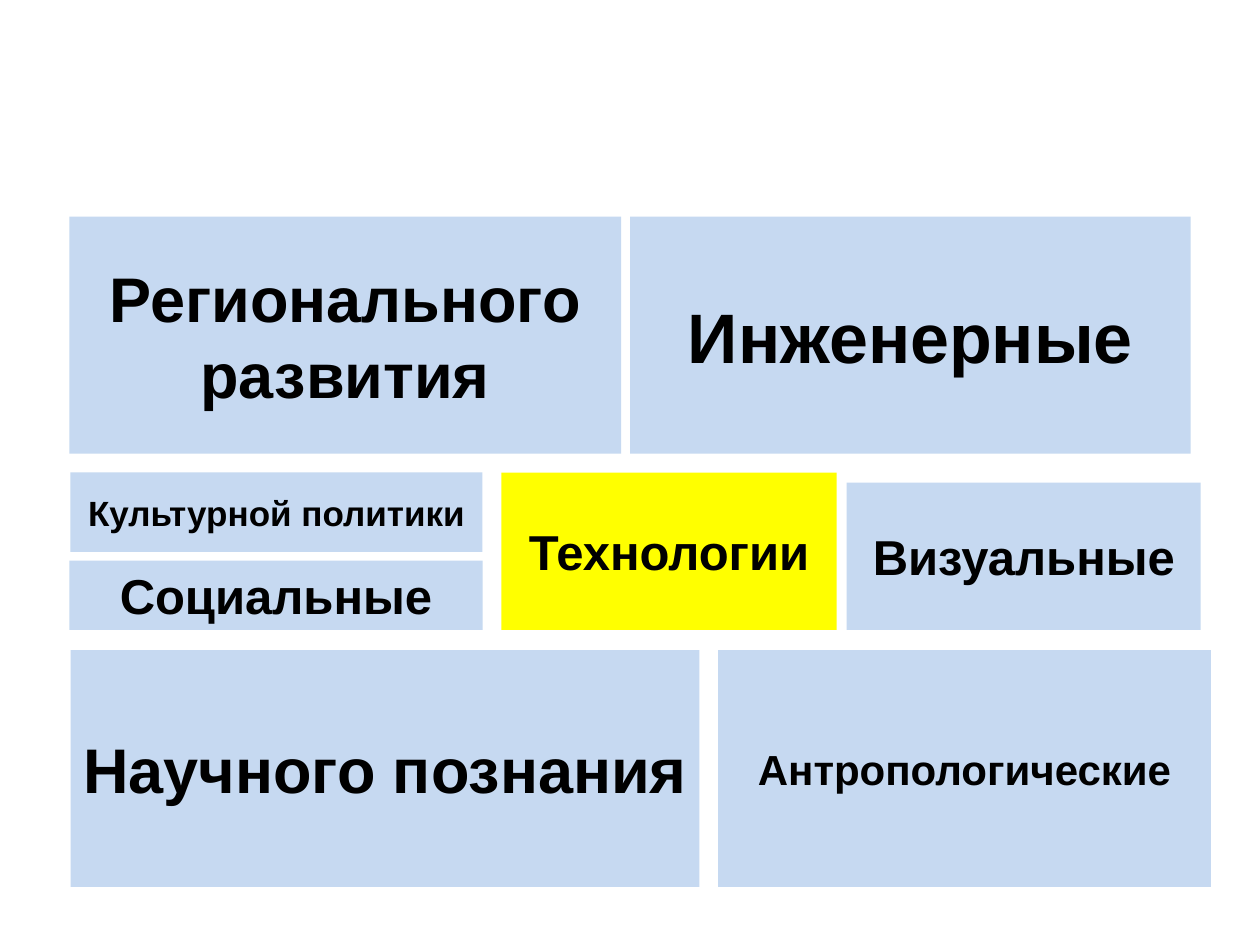
from typing import NamedTuple

from pptx import Presentation
from pptx.dml.color import RGBColor
from pptx.enum.shapes import MSO_SHAPE
from pptx.enum.text import MSO_ANCHOR, PP_ALIGN
from pptx.util import Inches, Pt

RECT = MSO_SHAPE.RECTANGLE
MIDDLE = MSO_ANCHOR.MIDDLE
CENTER = PP_ALIGN.CENTER

COLS, ROWS = 100, 75  # square grid cells of a tenth of an inch
CELL = Inches(0.1)
BLUE, YELLOW, BLACK = "C6D9F1", "FFFF00", "000000"

LEFT = 5.5
TOP, MID, LOW = 17.2, 37.5, 51.6  # tops of the three bands
TALL = 18.8  # height of the top and bottom bands
BASE = 50  # bottom edge of the middle band


class Tile(NamedTuple):
    text: str
    col: float
    row: float
    cols: float
    rows: float
    size: int
    fill: str = BLUE


TILES = [
    Tile("Технологии", 39.8, MID, 26.6, BASE - MID, 28, YELLOW),
    Tile("Регионального развития", LEFT, TOP, 43.8, TALL, 36),
    Tile("Инженерные", 50, TOP, 44.5, TALL, 40),
    Tile("Научного познания", LEFT + 0.1, LOW, 49.9, TALL, 36),
    Tile("Культурной политики", LEFT + 0.1, MID, 32.7, 6.3, 20),
    Tile("Визуальные", 67.2, 38.3, 28.1, BASE - 38.3, 28),
    Tile("Антропологические", 57, LOW, 39.1, TALL, 24),
    Tile("Социальные", LEFT, 44.5, 32.8, BASE - 44.5, 28),
]


def color(code: str) -> RGBColor:
    return RGBColor.from_string(code)


def draw(slide, tile: Tile) -> None:
    place = (round(n * CELL) for n in (tile.col, tile.row, tile.cols, tile.rows))
    box = slide.shapes.add_shape(RECT, *place)
    box.shadow.inherit = False
    box.fill.solid()
    box.fill.fore_color.rgb = color(tile.fill)
    box.line.fill.background()

    frame = box.text_frame
    frame.text = tile.text
    frame.word_wrap = True
    frame.vertical_anchor = MIDDLE
    # Narrow side margins keep the long titles on one line.
    frame.margin_left = frame.margin_right = Inches(0.05)
    para = frame.paragraphs[0]
    para.alignment = CENTER
    font = para.runs[0].font
    font.name = "Arial"
    font.size = Pt(tile.size)
    font.bold = True
    font.color.rgb = color(BLACK)


def main() -> None:
    deck = Presentation()
    deck.slide_width = COLS * CELL
    deck.slide_height = ROWS * CELL
    slide = deck.slides.add_slide(deck.slide_layouts[6])
    for tile in TILES:
        draw(slide, tile)
    deck.save("out.pptx")


if __name__ == "__main__":
    main()
